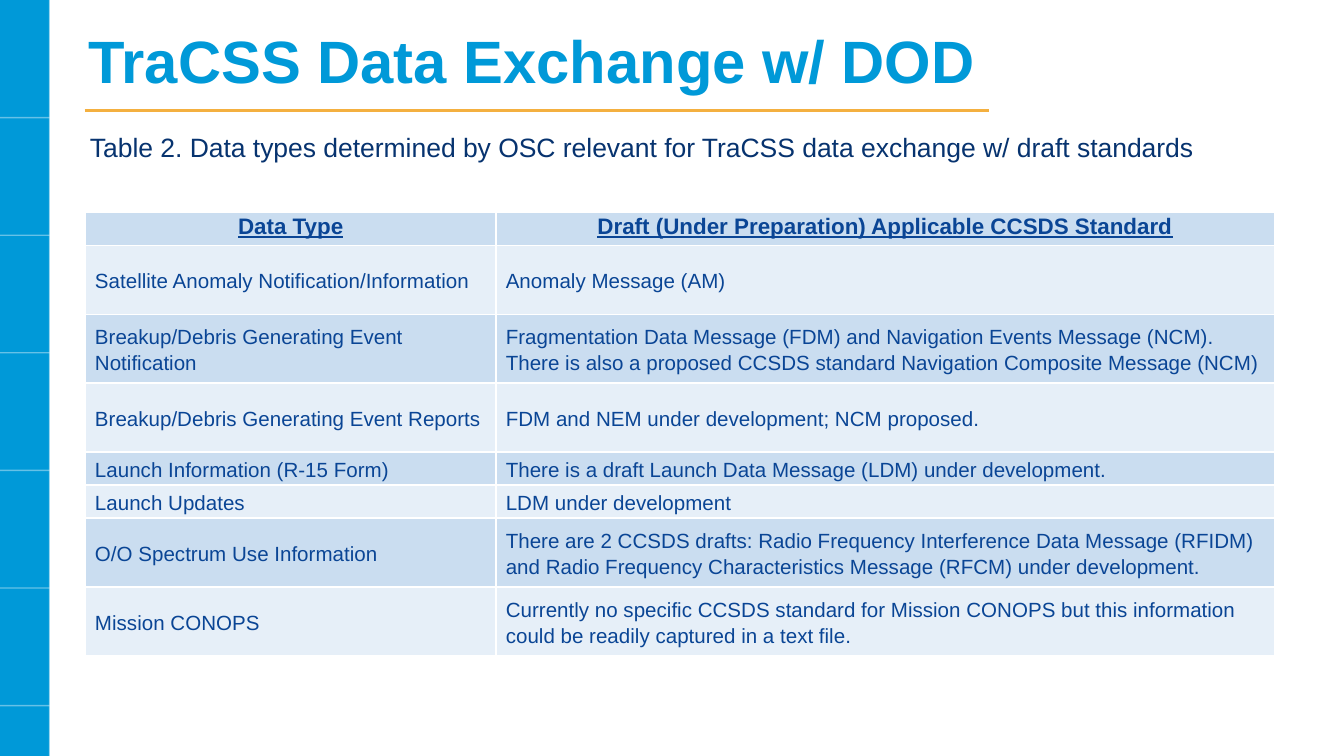
"""Build the TraCSS data exchange slide with its table of draft standards."""
from dataclasses import dataclass

from lxml import etree
from pptx import Presentation
from pptx.dml.color import RGBColor
from pptx.enum.shapes import MSO_CONNECTOR, MSO_SHAPE
from pptx.enum.text import MSO_ANCHOR, PP_ALIGN
from pptx.oxml import parse_xml
from pptx.oxml.ns import nsdecls, qn
from pptx.util import Pt

RECT = MSO_SHAPE.RECTANGLE
STRAIGHT = MSO_CONNECTOR.STRAIGHT
TOP, MIDDLE = MSO_ANCHOR.TOP, MSO_ANCHOR.MIDDLE
LEFT, CENTER = PP_ALIGN.LEFT, PP_ALIGN.CENTER
FONT = "Arial"
BLUE, NAVY, TABLE_BLUE = "0099D8", "07336F", "0A4595"
WHITE, GOLD = "FFFFFF", "F4B040"
BANDS = ("CADDF0", "E6EFF8")
WIDTH, HEIGHT = 720, 405
BAR_LEFT, BAR_RIGHT, RULE_STEP = -0.7, 26.6, 63
SHORT, TALL = 17.7, 36.9
COLUMNS = (220.1, 416.9)


@dataclass
class TextStyle:
    size: float
    color: str
    bold: bool = False
    underline: bool = False
    align: PP_ALIGN = LEFT
    spacing: float = 1.0


@dataclass
class Line:
    x1: float
    y1: float
    x2: float
    y2: float
    color: str = WHITE
    width: float = 0.75
    opacity: int = 40


@dataclass
class TextBox:
    text: str
    left: float
    top: float
    width: float
    height: float
    style: TextStyle
    anchor: MSO_ANCHOR = TOP
    margin_left: float = 7.2


@dataclass
class Row:
    data_type: str
    standard: str
    height: float = TALL


TITLE = TextStyle(32, BLUE, bold=True)
CAPTION = TextStyle(14.2, NAVY, spacing=1.05)
HEADER = TextStyle(12, TABLE_BLUE, True, True, CENTER, 1.07)
BODY = TextStyle(11, TABLE_BLUE, spacing=1.15)

LINES = [Line(BAR_LEFT, RULE_STEP * i, BAR_RIGHT, RULE_STEP * i) for i in range(1, 7)] + [
    Line(BAR_RIGHT, 0, BAR_RIGHT, HEIGHT),
    Line(45.4, 59, 530, 59, GOLD, 1.5, 100),
]
BOXES = [
    TextBox("TraCSS Data Exchange w/ DOD", 40.3, 8.6, 625, 46.8, TITLE, MIDDLE),
    TextBox("Table 2. Data types determined by OSC relevant for TraCSS data exchange "
            "w/ draft standards", 30.2, 61.9, 679, 30.2, CAPTION, margin_left=18),
]
ROWS = [
    Row("Data Type", "Draft (Under Preparation) Applicable CCSDS Standard", SHORT),
    Row("Satellite Anomaly Notification/Information", "Anomaly Message (AM)"),
    Row("Breakup/Debris Generating Event Notification",
        "Fragmentation Data Message (FDM) and Navigation Events Message (NCM).\n"
        "There is also a proposed CCSDS standard Navigation Composite Message (NCM)"),
    Row("Breakup/Debris Generating Event Reports",
        "FDM and NEM under development; NCM proposed."),
    Row("Launch Information (R-15 Form)",
        "There is a draft Launch Data Message (LDM) under development.", SHORT),
    Row("Launch Updates", "LDM under development", SHORT),
    Row("O/O Spectrum Use Information",
        "There are 2 CCSDS drafts: Radio Frequency Interference Data Message (RFIDM) "
        "and Radio Frequency Characteristics Message (RFCM) under development."),
    Row("Mission CONOPS",
        "Currently no specific CCSDS standard for Mission CONOPS but this information "
        "could be readily captured in a text file."),
]


def rgb(color: str) -> RGBColor:
    """Turn a hex string into a colour."""
    return RGBColor.from_string(color)


def write(tf, text: str, style: TextStyle) -> None:
    """Fill a text frame and format its runs."""
    tf.text = text
    tf.word_wrap = True
    for p in tf.paragraphs:
        p.alignment = style.align
        p.line_spacing = style.spacing
        for r in p.runs:
            r.font.name = FONT
            r.font.size = Pt(style.size)
            r.font.bold = style.bold
            r.font.underline = style.underline
            r.font.color.rgb = rgb(style.color)


def draw_line(s, line: Line) -> None:
    """Draw a straight line with its opacity."""
    c = s.shapes.add_connector(STRAIGHT, Pt(line.x1), Pt(line.y1), Pt(line.x2), Pt(line.y2))
    c.line.color.rgb = rgb(line.color)
    c.line.width = Pt(line.width)
    sp_pr = c._element.spPr
    etree.SubElement(sp_pr, qn("a:effectLst"))
    if line.opacity < 100:
        color = sp_pr.find(".//" + qn("a:srgbClr"))
        etree.SubElement(color, qn("a:alpha"), val=str(line.opacity * 1000))


def draw_bar(s) -> None:
    """Draw the blue bar along the left edge."""
    sp = s.shapes.add_shape(RECT, Pt(BAR_LEFT), Pt(0), Pt(BAR_RIGHT - BAR_LEFT), Pt(HEIGHT))
    sp.shadow.inherit = False
    sp.fill.solid()
    sp.fill.fore_color.rgb = rgb(BLUE)
    sp.line.fill.background()


def draw_box(s, box: TextBox) -> None:
    """Draw a text box."""
    sp = s.shapes.add_textbox(Pt(box.left), Pt(box.top), Pt(box.width), Pt(box.height))
    tf = sp.text_frame
    tf.margin_left = Pt(box.margin_left)
    tf.margin_right = tf.margin_top = tf.margin_bottom = Pt(7.2)
    tf.vertical_anchor = box.anchor
    write(tf, box.text, box.style)


def draw_cell(cell, text: str, style: TextStyle, anchor: MSO_ANCHOR, fill: str) -> None:
    """Fill a table cell and give it white borders."""
    write(cell.text_frame, text, style)
    cell.margin_left = cell.margin_right = Pt(5.2)
    cell.margin_top = cell.margin_bottom = Pt(0)
    cell.vertical_anchor = anchor
    cell.fill.solid()
    cell.fill.fore_color.rgb = rgb(fill)
    tc_pr = cell._tc.get_or_add_tcPr()
    for i, side in enumerate("LRTB"):
        tc_pr.insert(i, parse_xml(
            f'<a:ln{side} {nsdecls("a")} w="{Pt(1)}"><a:solidFill>'
            f'<a:srgbClr val="{WHITE}"/></a:solidFill></a:ln{side}>'))


def draw_table(s, rows: list[Row]) -> None:
    """Draw the banded table of data types and standards."""
    height = sum(row.height for row in rows)
    table = s.shapes.add_table(len(rows), len(COLUMNS), Pt(45.7), Pt(113.8),
                               Pt(sum(COLUMNS)), Pt(height)).table
    for column, width in zip(table.columns, COLUMNS):
        column.width = Pt(width)
    for i, row in enumerate(rows):
        table.rows[i].height = Pt(row.height)
        style, anchor = (BODY, MIDDLE) if i else (HEADER, TOP)
        for j, text in enumerate((row.data_type, row.standard)):
            draw_cell(table.cell(i, j), text, style, anchor, BANDS[i % 2])


def main() -> None:
    """Build and save the slide."""
    prs = Presentation()
    prs.slide_width, prs.slide_height = Pt(WIDTH), Pt(HEIGHT)
    s = prs.slides.add_slide(prs.slide_layouts[6])
    draw_bar(s)
    for line in LINES:
        draw_line(s, line)
    for box in BOXES:
        draw_box(s, box)
    draw_table(s, ROWS)
    prs.save("out.pptx")


if __name__ == "__main__":
    main()
